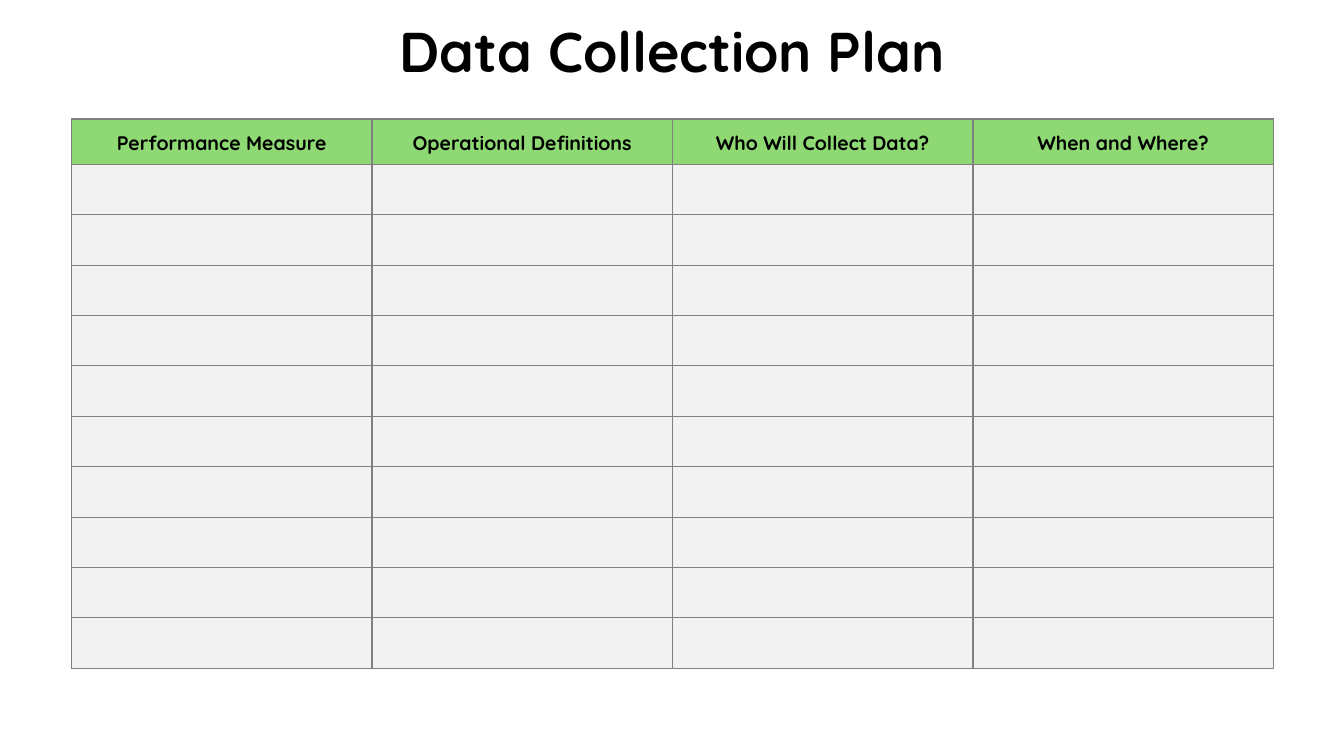
from dataclasses import dataclass

from lxml.etree import SubElement
from pptx import Presentation
from pptx.dml.color import RGBColor
from pptx.enum.text import MSO_ANCHOR, PP_ALIGN
from pptx.oxml.ns import qn
from pptx.util import Inches, Pt


@dataclass(frozen=True)
class Theme:
    font: str = "Quicksand"
    text: str = "000000"
    header: str = "8ED973"
    body: str = "F2F2F2"
    border: str = "808080"
    border_width: float = 1
    title_size: int = 40
    header_size: int = 14


def write_text(frame, text, *, font, size, color, spacing, bold=True):
    paragraph = frame.paragraphs[0]
    paragraph.alignment = PP_ALIGN.CENTER
    paragraph.line_spacing = spacing
    run = paragraph.add_run()
    run.text = text
    run.font.name = font
    run.font.size = Pt(size)
    run.font.bold = bold
    run.font.color.rgb = RGBColor.from_string(color)


class SlideBuilder:
    def __init__(self, slide, theme):
        self.slide = slide
        self.theme = theme

    def add_title(self, text, left, top, width, height):
        box = self.slide.shapes.add_textbox(
            Inches(left), Inches(top), Inches(width), Inches(height))
        frame = box.text_frame
        frame.word_wrap = True
        frame.vertical_anchor = MSO_ANCHOR.MIDDLE
        write_text(frame, text, font=self.theme.font, size=self.theme.title_size,
                   color=self.theme.text, spacing=0.9)

    def style_cell(self, cell, fill):
        properties = cell._tc.get_or_add_tcPr()
        for side in ("a:lnL", "a:lnR", "a:lnT", "a:lnB"):
            line = SubElement(properties, qn(side), w=str(Pt(self.theme.border_width)))
            solid = SubElement(line, qn("a:solidFill"))
            SubElement(solid, qn("a:srgbClr"), val=self.theme.border)
        cell.fill.solid()
        cell.fill.fore_color.rgb = RGBColor.from_string(fill)

    def add_header_cell(self, cell, text):
        self.style_cell(cell, self.theme.header)
        cell.vertical_anchor = MSO_ANCHOR.MIDDLE
        cell.margin_left = cell.margin_right = Inches(0.1)
        cell.margin_top = cell.margin_bottom = Inches(0.1)
        write_text(cell.text_frame, text, font=self.theme.font,
                   size=self.theme.header_size, color=self.theme.text, spacing=1.07)

    def add_plan_table(self, headings, empty_rows, left, top, column_width,
                       header_height, row_height):
        table = self.slide.shapes.add_table(
            empty_rows + 1, len(headings), Inches(left), Inches(top),
            Inches(column_width * len(headings)),
            Inches(header_height + row_height * empty_rows)).table
        for column in table.columns:
            column.width = Inches(column_width)
        for index, row in enumerate(table.rows):
            row.height = Inches(row_height if index else header_height)
            for cell, heading in zip(row.cells, headings):
                if index:
                    self.style_cell(cell, self.theme.body)
                else:
                    self.add_header_cell(cell, heading)


def main():
    presentation = Presentation()
    presentation.slide_width = Inches(13.33)
    presentation.slide_height = Inches(7.5)
    slide = presentation.slides.add_slide(presentation.slide_layouts[6])
    builder = SlideBuilder(slide, Theme())
    builder.add_title("Data Collection Plan", 3.78, 0, 5.78, 1.08)
    builder.add_plan_table(
        ["Performance Measure", "Operational Definitions",
         "Who Will Collect Data?", "When and Where?"],
        empty_rows=10, left=0.71, top=1.18, column_width=2.98,
        header_height=0.39, row_height=0.5)
    presentation.save("out.pptx")


if __name__ == "__main__":
    main()
